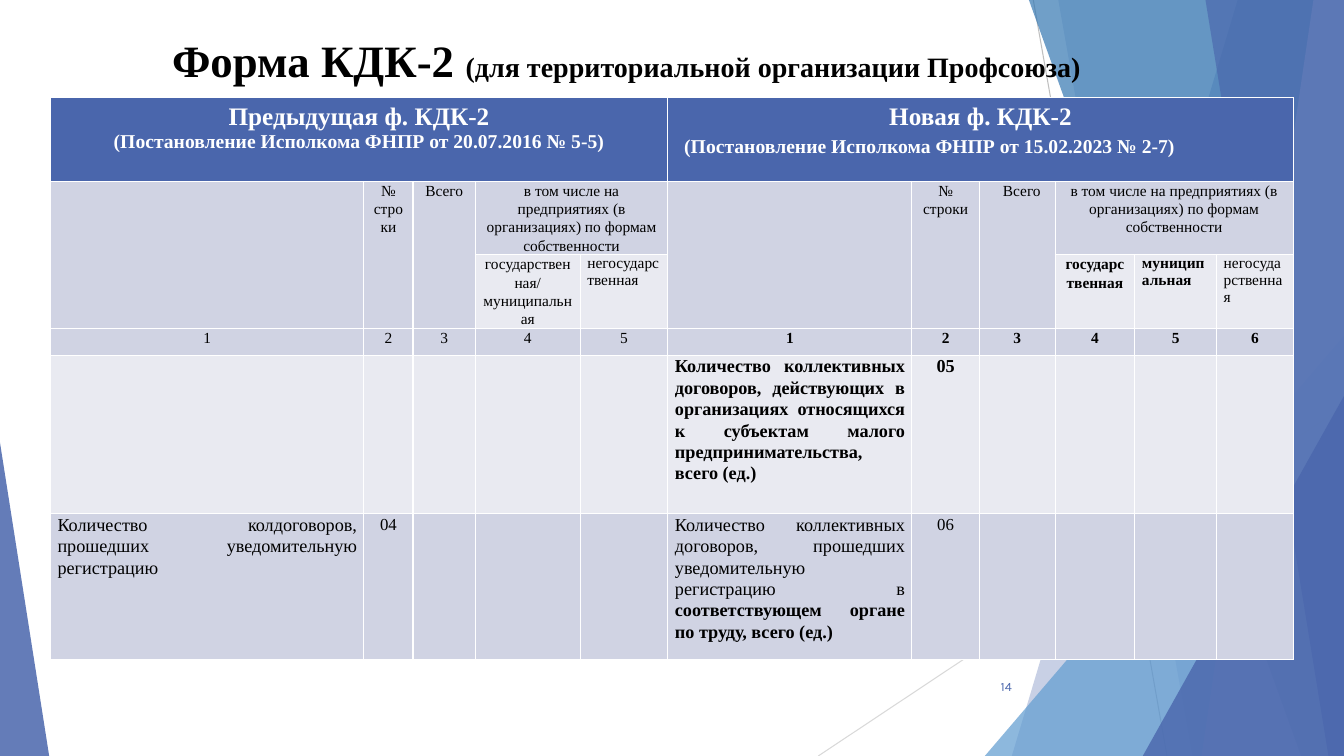
"""Build the slide that compares the previous and the new КДК-2 form."""
from lxml.etree import SubElement
from pptx import Presentation
from pptx.dml.color import RGBColor as Rgb
from pptx.enum.shapes import MSO_CONNECTOR as Link, MSO_SHAPE as Kind
from pptx.enum.text import MSO_ANCHOR as Anchor, PP_ALIGN as Align
from pptx.oxml.ns import qn
from pptx.util import Cm, Pt

HUES = {"blue": "4A66AC", "sky": "629DD1", "deep": "3477B2", "pale": "90A2CF",
        "gray": "BFBFBF", "light": "D9D9D9", "band": "D0D3E3", "soft": "E9EAF1",
        "white": "FFFFFF", "black": "000000"}
SERIF = "Times New Roman"
WIDE, HIGH = 33.87, 19.05


def paint(shape, hue, alpha):
    shape.shadow.inherit = False
    shape.line.fill.background()
    shape.fill.solid()
    shape.fill.fore_color.rgb = Rgb.from_string(HUES[hue])
    color = shape.fill._xPr.find(qn("a:solidFill"))[0]
    SubElement(color, qn("a:alpha")).set("val", str(alpha * 1000))


def style(font, size, hue="black", bold=False, name=SERIF):
    font.name, font.size, font.bold = name, Pt(size), bold
    font.color.rgb = Rgb.from_string(HUES[hue])


prs = Presentation()
prs.slide_width, prs.slide_height = Cm(WIDE), Cm(HIGH)
slide = prs.slides.add_slide(prs.slide_layouts[5])
shapes = slide.shapes

for x1, y1, x2, y2, hue in [(26.04, 0, 29.41, HIGH, "gray"),
                            (WIDE, 10.24, 20.62, HIGH, "light")]:
    line = shapes.add_connector(Link.STRAIGHT, Cm(x1), Cm(y1), Cm(x2), Cm(y2))
    line.line.color.rgb = Rgb.from_string(HUES[hue])
    line.line.width = Pt(0.75)
    SubElement(line._element.spPr, qn("a:effectLst"))

facets = [("band", 31.19, 25.5, "blue", 30),
          ("band", 26.67, 30.05, "blue", 20),
          ("peak", 24.82, 8.46, 9.05, 1, "sky", 72),
          ("band", 25.93, 32.79, "deep", 70),
          ("band", 33.1, 30.28, "pale", 70),
          ("band", 30.38, 33.48, "blue", 65),
          ("peak", 28.8, 9.98, 5.07, 1, "blue", 80),
          ("peak", 0, 11.15, 1.24, 0, "blue", 85)]
for kind, *spot, hue, alpha in facets:
    if kind == "band":
        top, foot = spot
        path = shapes.build_freeform(Cm(top), Cm(0))
        path.add_line_segments([(Cm(WIDE), Cm(0)), (Cm(WIDE), Cm(HIGH)),
                                (Cm(foot), Cm(HIGH))])
        facet = path.convert_to_shape()
    else:
        x, y, w, tip = spot
        facet = shapes.add_shape(Kind.ISOSCELES_TRIANGLE, Cm(x), Cm(y),
                                 Cm(w), Cm(HIGH - y))
        facet.adjustments[0] = tip
    paint(facet, hue, alpha)

page = shapes.add_textbox(Cm(23.85), Cm(16.79), Cm(1.9), Cm(1.02)).text_frame
page.word_wrap = True
page.vertical_anchor = Anchor.MIDDLE
para = page.paragraphs[0]
para.text, para.alignment = "14", Align.RIGHT
style(para.font, 9, "blue", name="Karla")

title = shapes.title
title.left, title.top, title.width, title.height = Cm(2.44), Cm(0.53), Cm(26.7), Cm(1.96)
title.text_frame.vertical_anchor = Anchor.MIDDLE
para = title.text_frame.paragraphs[0]
para.alignment = Align.CENTER
for text, size in [("Форма КДК-2 ", 32),
                   ("(для территориальной организации Профсоюза)", 20)]:
    run = para.add_run()
    run.text = text
    style(run.font, size, bold=True)
shapes._spTree.append(title._element)

cols = [7.9, 1.24, 1.57, 2.64, 2.21, 6.15, 1.7, 1.91, 2.01, 2.06, 1.93]
rows = [2.11, 1.73, 1.55, 0.69, 3.99, 3.68]
table = shapes.add_table(len(rows), len(cols), Cm(1.27), Cm(2.46),
                         Cm(sum(cols)), Cm(sum(rows))).table
for col, width in zip(table.columns, cols):
    col.width = Cm(width)
for row, height in zip(table.rows, rows):
    row.height = Cm(height)
fills = ["blue", "band", "soft", "band", "soft", "band"]
for row, hue in zip(table.rows, fills):
    for cell in row.cells:
        cell.fill.solid()
        cell.fill.fore_color.rgb = Rgb.from_string(HUES[hue])

spans = [(0, 0, 0, 4), (0, 5, 0, 10), (1, 3, 1, 4), (1, 8, 1, 10)]
spans += [(1, c, 2, c) for c in (0, 1, 2, 5, 6, 7)]
for r1, c1, r2, c2 in spans:
    table.cell(r1, c1).merge(table.cell(r2, c2))

heads = [(0, "Предыдущая ф. КДК-2", "",
          "(Постановление Исполкома ФНПР от 20.07.2016 № 5-5)", Align.CENTER),
         (5, "Новая ф. КДК-2", " ",
          "(Постановление Исполкома ФНПР от 15.02.2023 № 2-7)", Align.LEFT)]
for c, name, gap, order, align in heads:
    frame = table.cell(0, c).text_frame
    para = frame.paragraphs[0]
    para.text, para.alignment = name, Align.CENTER
    style(para.font, 18, "white", True)
    para = frame.add_paragraph()
    para.alignment = align
    for text, size in [(gap, 18), (order, 14)]:
        if text:
            run = para.add_run()
            run.text = text
            style(run.font, size, "white", True)

forms = "в том числе на предприятиях (в организациях) по формам собственности"
mid, left, just = Align.CENTER, Align.LEFT, Align.JUSTIFY
texts = [(1, c, 11, mid, [(text, False)]) for c, text in
         [(1, "№ строки"), (2, "Всего"), (3, forms),
          (6, "№ строки"), (7, "Всего"), (8, forms)]]
texts += [(2, 3, 11, mid, [("государственная/муниципальная", False)]),
          (2, 4, 11, left, [("негосударственная", False)]),
          (2, 8, 11, mid, [("государственная", True)]),
          (2, 9, 11, left, [("муниципальная", True)]),
          (2, 10, 11, left, [("негосударственная", False)])]
texts += [(3, c, 11, mid, [(str(c % 5 + 1 if c < 10 else 6), c > 4)])
          for c in range(len(cols))]
texts += [(4, 5, 13, just, [("Количество коллективных договоров, действующих в "
                             "организациях относящихся к субъектам малого "
                             "предпринимательства, всего (ед.)", True)]),
          (4, 6, 13, mid, [("05", True)]),
          (5, 0, 13, just, [("Количество колдоговоров, прошедших "
                             "уведомительную регистрацию", False)]),
          (5, 1, 12, mid, [("04", False)]),
          (5, 5, 13, just, [("Количество коллективных договоров, прошедших "
                             "уведомительную регистрацию в ", False),
                            ("соответствующем органе по труду, всего (ед.)", True)]),
          (5, 6, 12, mid, [("06", False)])]
for r, c, size, align, runs in texts:
    cell = table.cell(r, c)
    cell.margin_left = cell.margin_right = Cm(0.18)
    cell.margin_top = cell.margin_bottom = 0
    para = cell.text_frame.paragraphs[0]
    para.alignment = align
    if align != left:
        para.line_spacing, para.space_after = 1.07, Pt(8)
    for text, bold in runs:
        run = para.add_run()
        run.text = text
        style(run.font, size, bold=bold)
total = table.cell(1, 7).text_frame.paragraphs[0]
total._p.get_or_add_pPr().set("indent", str(Cm(0.23)))

prs.save("out.pptx")
